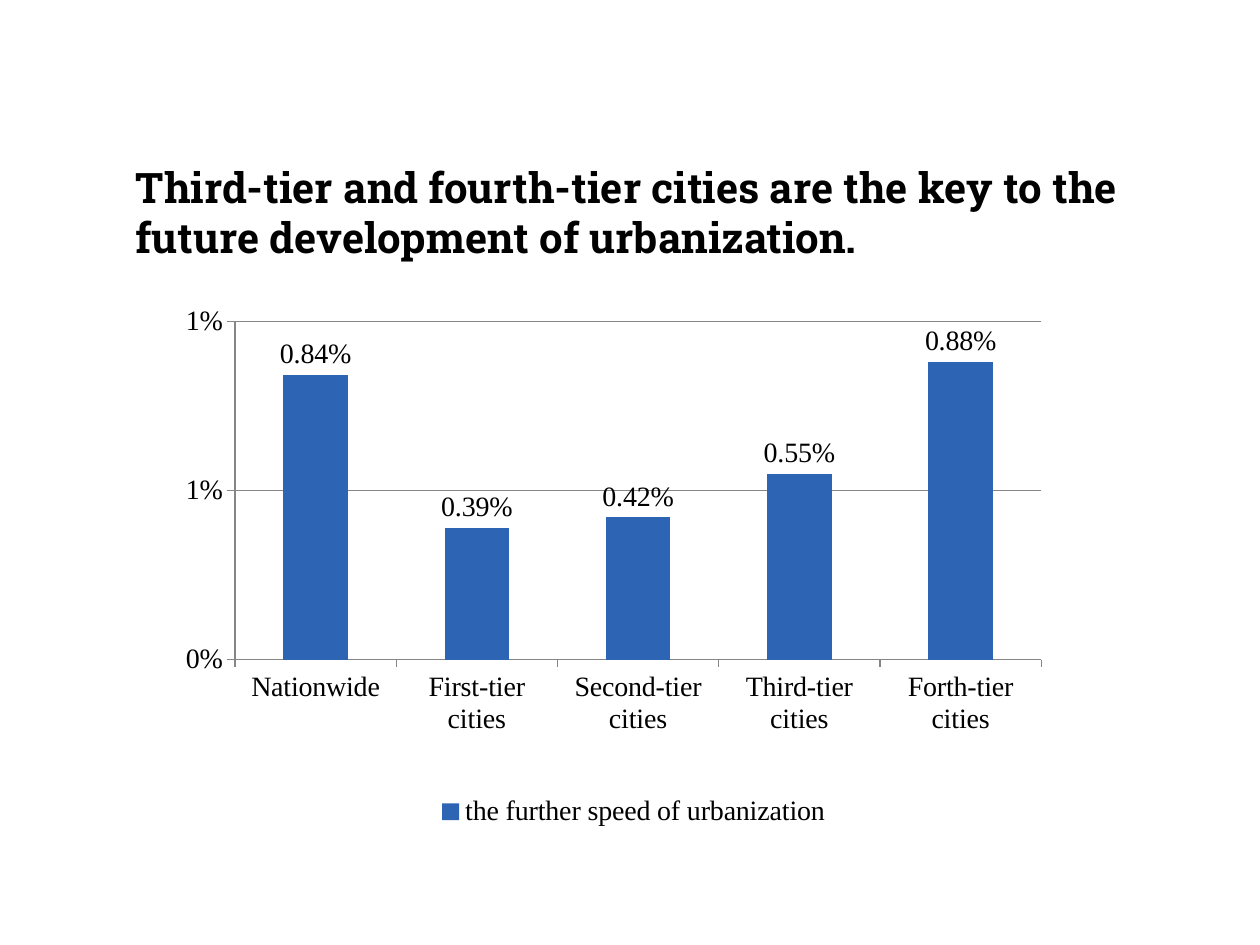
from lxml import etree
from pptx import Presentation
from pptx.chart.data import CategoryChartData
from pptx.dml.color import RGBColor
from pptx.enum.chart import XL_CHART_TYPE as ChartType
from pptx.enum.chart import XL_LABEL_POSITION as LabelPos
from pptx.enum.chart import XL_LEGEND_POSITION as LegendPos
from pptx.enum.chart import XL_TICK_MARK as Tick
from pptx.oxml.ns import qn
from pptx.util import Inches, Pt

COLORS = {"text": "000000", "bar": "2D65B4", "line": "868686"}
TITLE = ("Third-tier and fourth-tier cities are the key to the "
         "future development of urbanization.")
SERIES = "the further speed of urbanization"
RATES = {
    "Nationwide": 0.0084,
    "First-tier cities": 0.0039,
    "Second-tier cities": 0.0042,
    "Third-tier cities": 0.0055,
    "Forth-tier cities": 0.0088,
}


def color(name):
    return RGBColor.from_string(COLORS[name])


def style_font(font, name, size, bold=False):
    font.name = name
    font.size = Pt(size)
    font.bold = bold
    font.color.rgb = color("text")


def style_line(line):
    line.color.rgb = color("line")
    line.width = Pt(0.75)


def style_axis(axis):
    axis.major_tick_mark = Tick.OUTSIDE
    axis.minor_tick_mark = Tick.NONE
    style_font(axis.tick_labels.font, "Times New Roman", 16)
    style_line(axis.format.line)


def manual_layout(layout, x, y, w, h, inner=False):
    for child in list(layout):
        layout.remove(child)
    manual = etree.SubElement(layout, qn("c:manualLayout"))
    settings = {"layoutTarget": "inner"} if inner else {}
    settings.update(xMode="edge", yMode="edge", x=x, y=y, w=w, h=h)
    for tag, value in settings.items():
        etree.SubElement(manual, qn(f"c:{tag}")).set("val", str(value))


def add_title(slide):
    sp = slide.shapes.add_textbox(Inches(0.98), Inches(1.23), Inches(8.35), Inches(0.91))
    tf = sp.text_frame
    tf.word_wrap = True
    tf.text = TITLE
    style_font(tf.paragraphs[0].runs[0].font, "Roboto Slab", 24, bold=True)


def add_rate_chart(slide):
    data = CategoryChartData(number_format="0.00%")
    data.categories = list(RATES)
    data.add_series(SERIES, list(RATES.values()))
    chart = slide.shapes.add_chart(
        ChartType.COLUMN_CLUSTERED, Inches(1.3), Inches(2.33),
        Inches(7.24), Inches(4.33), data).chart
    chart.has_title = False
    style_font(chart.font, "Arial", 10)

    plot = chart.plots[0]
    plot.gap_width = 150
    plot.vary_by_categories = False
    fill = plot.series[0].format.fill
    fill.solid()
    fill.fore_color.rgb = color("bar")
    labels = plot.series[0].data_labels
    labels.show_value = True
    labels.number_format = "0.00%"
    labels.number_format_is_linked = False
    labels.position = LabelPos.OUTSIDE_END
    style_font(labels.font, "Times New Roman", 16)

    style_axis(chart.category_axis)
    axis = chart.value_axis
    style_axis(axis)
    axis.minimum_scale = 0
    axis.maximum_scale = 0.01
    axis.major_unit = 0.005
    axis.tick_labels.number_format = "0%"
    axis.tick_labels.number_format_is_linked = False
    axis.has_major_gridlines = True
    style_line(axis.major_gridlines.format.line)

    chart.has_legend = True
    legend = chart.legend
    legend.position = LegendPos.RIGHT
    legend.include_in_layout = False
    style_font(legend.font, "Times New Roman", 16)

    plot_area = chart.element.find(".//" + qn("c:plotArea"))
    plot_layout = plot_area.find(qn("c:layout"))
    if plot_layout is None:
        plot_layout = etree.Element(qn("c:layout"))
        plot_area.insert(0, plot_layout)
    manual_layout(plot_layout, 0.078, 0.051, 0.884, 0.62, inner=True)
    legend_pos = chart.element.find(".//" + qn("c:legendPos"))
    legend_layout = legend_pos.getparent().find(qn("c:layout"))
    if legend_layout is None:
        legend_layout = etree.Element(qn("c:layout"))
        legend_pos.addnext(legend_layout)
    manual_layout(legend_layout, 0.3, 0.91, 0.43, 0.08)


def main():
    prs = Presentation()
    prs.slide_width = Inches(10)
    prs.slide_height = Inches(7.5)
    slide = prs.slides.add_slide(prs.slide_layouts[6])
    add_title(slide)
    add_rate_chart(slide)
    prs.save("out.pptx")


if __name__ == "__main__":
    main()
